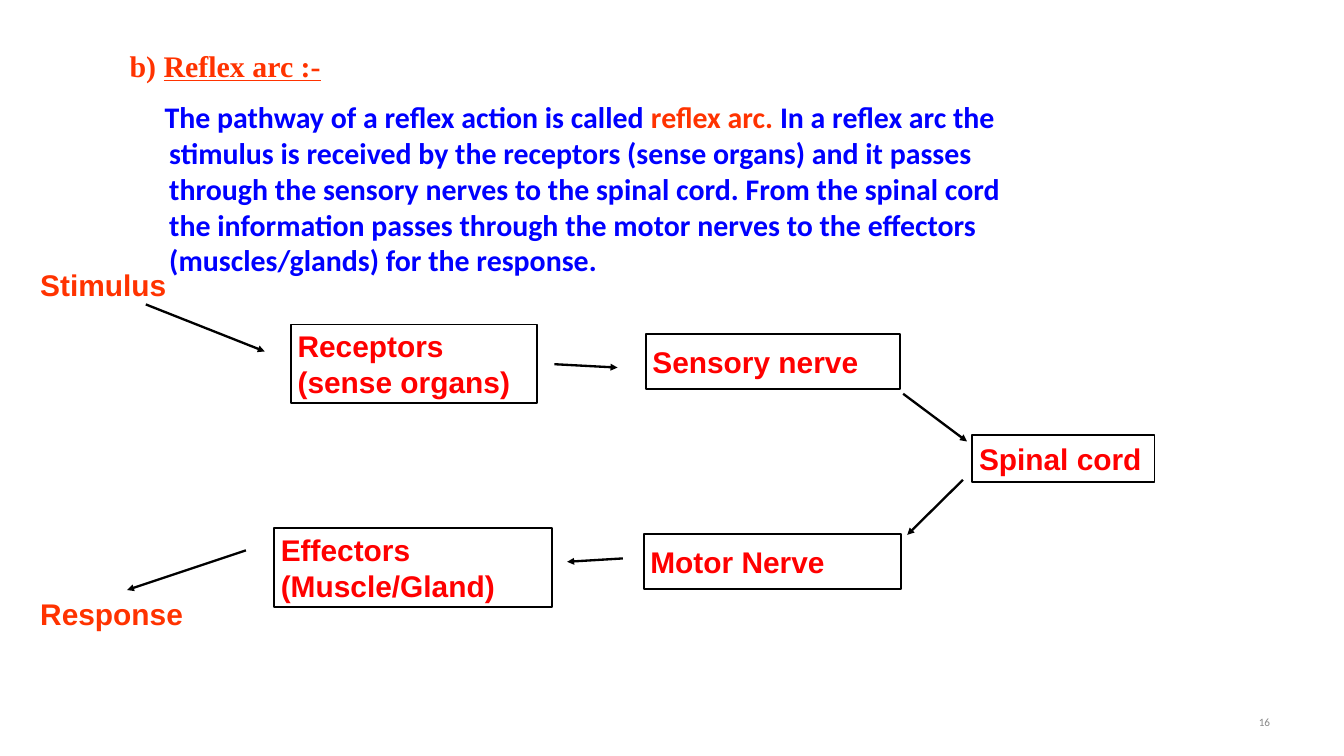
from dataclasses import dataclass

from lxml import etree
from pptx import Presentation
from pptx.dml.color import RGBColor
from pptx.enum.shapes import MSO_CONNECTOR, MSO_SHAPE
from pptx.enum.text import MSO_ANCHOR, PP_ALIGN
from pptx.oxml.ns import qn
from pptx.util import Inches, Pt

RECTANGLE = MSO_SHAPE.RECTANGLE
STRAIGHT = MSO_CONNECTOR.STRAIGHT
TOP, MIDDLE = MSO_ANCHOR.TOP, MSO_ANCHOR.MIDDLE
LEFT, RIGHT = PP_ALIGN.LEFT, PP_ALIGN.RIGHT


@dataclass(frozen=True)
class Theme:
    orange: RGBColor = RGBColor(0xFF, 0x33, 0x00)
    red: RGBColor = RGBColor(0xFF, 0x00, 0x00)
    blue: RGBColor = RGBColor(0x00, 0x00, 0xFF)
    black: RGBColor = RGBColor(0x00, 0x00, 0x00)
    gray: RGBColor = RGBColor(0x88, 0x88, 0x88)
    text_size: Pt = Pt(32)
    number_size: Pt = Pt(12)
    box_line: Pt = Pt(2)
    arrow_line: Pt = Pt(2.5)
    title_font: str = "Times New Roman"
    body_font: str = "Calibri"
    diagram_font: str = "Arial"


THEME = Theme()

STAGES = [
    ("Receptors\n(sense organs)", (4.33, 4.83, 3.66, 1.17)),
    ("Sensory nerve", (9.61, 4.97, 3.78, 0.82)),
    ("Spinal cord", (14.47, 6.47, 2.71, 0.7)),
    ("Motor Nerve", (9.58, 7.94, 3.83, 0.82)),
    ("Effectors\n(Muscle/Gland)", (4.08, 7.86, 4.13, 1.17)),
]
ENDPOINTS = [
    ("Stimulus", (0.5, 3.92, 2.28, 0.64)),
    ("Response", (0.5, 8.81, 2.54, 0.64)),
]
ARROWS = [
    ((2.17, 4.53), (3.94, 5.23)),
    ((8.25, 5.42), (9.19, 5.47)),
    ((13.44, 5.86), (14.39, 6.57)),
    ((14.33, 7.14), (13.5, 7.96)),
    ((9.27, 8.31), (8.44, 8.36)),
    ((3.66, 8.19), (1.89, 8.78)),
]


def inches(values):
    return [Inches(value) for value in values]


def style_paragraph(paragraph, font_name, size, color, bold=True):
    paragraph.font.name = font_name
    paragraph.font.size = size
    paragraph.font.bold = bold
    paragraph.font.color.rgb = color


def add_text_box(slide, box, anchor=TOP):
    frame = slide.shapes.add_textbox(*inches(box)).text_frame
    frame.word_wrap = True
    frame.vertical_anchor = anchor
    return frame


def add_title(slide, box):
    paragraph = add_text_box(slide, box, MIDDLE).paragraphs[0]
    paragraph.add_run().text = "b) "
    heading = paragraph.add_run()
    heading.text = "Reflex arc :-"
    heading.font.underline = True
    style_paragraph(paragraph, THEME.title_font, THEME.text_size, THEME.orange)


def add_description(slide, box):
    paragraph = add_text_box(slide, box).paragraphs[0]
    properties = paragraph._p.get_or_add_pPr()
    properties.set("marL", str(Inches(0.5)))
    properties.set("indent", str(Inches(-0.07)))
    parts = [
        ("The pathway of a reflex action is called ", THEME.blue),
        ("reflex arc.", THEME.orange),
        (" In a reflex arc the stimulus is received by the receptors "
         "(sense organs) and it passes through the sensory nerves to the "
         "spinal cord. From the spinal cord the information passes through "
         "the motor nerves to the effectors (muscles/glands) for the "
         "response.", THEME.blue),
    ]
    for text, color in parts:
        run = paragraph.add_run()
        run.text = text
        run.font.color.rgb = color
    style_paragraph(paragraph, THEME.body_font, THEME.text_size, THEME.blue)


def add_endpoint(slide, text, box):
    frame = add_text_box(slide, box)
    frame.text = text
    style_paragraph(frame.paragraphs[0], THEME.diagram_font, THEME.text_size, THEME.orange)


def add_stage(slide, text, box):
    shape = slide.shapes.add_shape(RECTANGLE, *inches(box))
    shape.shadow.inherit = False
    shape.fill.background()
    shape.line.color.rgb = THEME.black
    shape.line.width = THEME.box_line
    frame = shape.text_frame
    frame.word_wrap = True
    frame.vertical_anchor = MIDDLE
    frame.text = text
    for paragraph in frame.paragraphs:
        paragraph.alignment = LEFT
        style_paragraph(paragraph, THEME.diagram_font, THEME.text_size, THEME.red)


def add_arrow(slide, start, end):
    connector = slide.shapes.add_connector(STRAIGHT, *inches(start + end))
    connector.line.color.rgb = THEME.black
    connector.line.width = THEME.arrow_line
    line = connector.line._get_or_add_ln()
    etree.SubElement(line, qn("a:tailEnd"), type="triangle")
    etree.SubElement(connector._element.spPr, qn("a:effectLst"))


def add_slide_number(slide, box):
    frame = add_text_box(slide, box, MIDDLE)
    frame.text = "16"
    paragraph = frame.paragraphs[0]
    paragraph.alignment = RIGHT
    style_paragraph(paragraph, THEME.body_font, THEME.number_size, THEME.gray, bold=False)


def add_reflex_diagram(slide):
    for text, box in ENDPOINTS:
        add_endpoint(slide, text, box)
    for start, end in ARROWS:
        add_arrow(slide, start, end)
    for text, box in STAGES:
        add_stage(slide, text, box)


def main():
    presentation = Presentation()
    presentation.slide_width = Inches(20)
    presentation.slide_height = Inches(11.25)
    slide = presentation.slides.add_slide(presentation.slide_layouts[6])
    add_slide_number(slide, (16.67, 10.54, 2.33, 0.4))
    add_description(slide, (1.92, 1.42, 13.78, 2.53))
    add_title(slide, (1.83, 0.5, 12.04, 0.94))
    add_reflex_diagram(slide)
    presentation.save("out.pptx")


if __name__ == "__main__":
    main()
